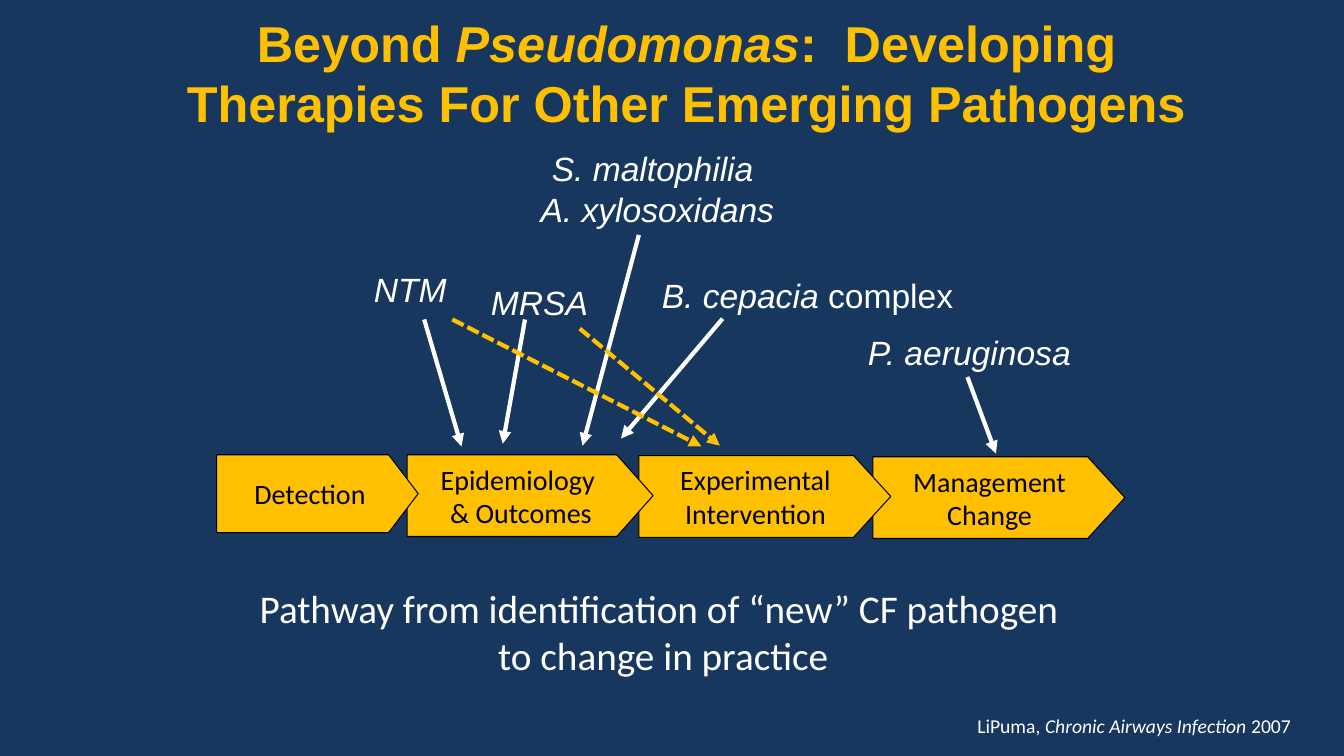
from lxml import etree
from pptx import Presentation
from pptx.dml.color import RGBColor
from pptx.enum.dml import MSO_LINE
from pptx.enum.shapes import MSO_CONNECTOR, MSO_SHAPE
from pptx.enum.text import MSO_ANCHOR, PP_ALIGN
from pptx.oxml.ns import qn
from pptx.util import Cm, Pt

NAVY = RGBColor(0x17, 0x37, 0x5E)
GOLD = RGBColor(0xFF, 0xC0, 0x00)
WHITE = RGBColor(0xFF, 0xFF, 0xFF)
BLACK = RGBColor(0x00, 0x00, 0x00)

LEFT = PP_ALIGN.LEFT
CENTER = PP_ALIGN.CENTER
TOP = MSO_ANCHOR.TOP
MIDDLE = MSO_ANCHOR.MIDDLE
STRAIGHT = MSO_CONNECTOR.STRAIGHT
PENTAGON = MSO_SHAPE.PENTAGON
DASHED = MSO_LINE.SQUARE_DOT

STAGES = [
    ((22, 11.51, 6.35, 2.06), 0.456, ["Management", "Change"]),
    ((16.1, 11.48, 6.35, 2.06), 0.456, ["Experimental", "Intervention"]),
    ((10.26, 11.46, 6.2, 2.06), 0.445, ["Epidemiology ", "& Outcomes"]),
    ((5.46, 11.46, 5.08, 1.96), 0.38, ["Detection"]),
]

PATHOGENS = [
    ((21.62, 8.23, 5.97, 1.27), LEFT, [[("P. aeruginosa", True)]]),
    ((9.17, 6.65, 2.34, 1.27), CENTER, [[("NTM", True)]]),
    ((12.12, 6.99, 2.95, 1.27), CENTER, [[("MRSA", True)]]),
    ((13.34, 3.61, 6.45, 2.31), CENTER,
     [[("S. maltophilia ", True)], [("A. xylosoxidans", True)]]),
    ((16.43, 6.81, 8.71, 1.3), LEFT,
     [[("B. cepacia ", True), ("complex", False)]]),
]

CURRENT_ARROWS = [
    (24.38, 9.5, 25.1, 11.43),
    (10.69, 8.05, 11.63, 11.25),
    (13.23, 8.05, 12.67, 11.18),
    (16.1, 5.92, 14.68, 11.23),
    (18.21, 8.03, 15.65, 11.05),
]

EMERGING_ARROWS = [
    (11.4, 8.05, 17.68, 11.25),
    (14.61, 8.28, 18.14, 11.23),
]


def write_text(frame, lines, font_name, size, color, alignment, bold=False):
    for index, line in enumerate(lines):
        paragraph = frame.add_paragraph() if index else frame.paragraphs[0]
        paragraph.alignment = alignment
        for text, italic in line:
            run = paragraph.add_run()
            run.text = text
            run.font.name = font_name
            run.font.size = Pt(size)
            run.font.color.rgb = color
            run.font.bold = bold
            run.font.italic = italic


def add_text(slide, box, lines, font_name, size, color=WHITE,
             alignment=CENTER, anchor=TOP, bold=False):
    frame = slide.shapes.add_textbox(*map(Cm, box)).text_frame
    frame.word_wrap = True
    frame.vertical_anchor = anchor
    write_text(frame, lines, font_name, size, color, alignment, bold)


def add_stage(slide, box, point, labels):
    shape = slide.shapes.add_shape(PENTAGON, *map(Cm, box))
    shape.adjustments[0] = point
    shape.shadow.inherit = False
    shape.fill.solid()
    shape.fill.fore_color.rgb = GOLD
    shape.line.color.rgb = BLACK
    shape.line.width = Pt(0.75)
    frame = shape.text_frame
    frame.word_wrap = False
    frame.vertical_anchor = MIDDLE
    lines = [[(label, False)] for label in labels]
    write_text(frame, lines, "Calibri", 20, BLACK, CENTER)


def add_arrow(slide, ends, color, dash=None):
    connector = slide.shapes.add_connector(STRAIGHT, *map(Cm, ends))
    connector.line.color.rgb = color
    connector.line.width = Pt(3)
    if dash:
        connector.line.dash_style = dash
    outline = connector.line._get_or_add_ln()
    etree.SubElement(outline, qn("a:tailEnd"), type="triangle")
    etree.SubElement(connector._element.spPr, qn("a:effectLst"))


def main():
    presentation = Presentation()
    presentation.slide_width = Cm(33.87)
    presentation.slide_height = Cm(19.05)
    slide = presentation.slides.add_slide(presentation.slide_layouts[6])
    slide.background.fill.solid()
    slide.background.fill.fore_color.rgb = NAVY

    for box, point, labels in STAGES:
        add_stage(slide, box, point, labels)

    title = [[("Beyond ", False), ("Pseudomonas", True),
              (":  Developing Therapies For Other Emerging Pathogens", False)]]
    add_text(slide, (3.73, 0.28, 27.15, 3.1), title, "Arial", 36, GOLD,
             anchor=MIDDLE, bold=True)

    for box, alignment, lines in PATHOGENS:
        add_text(slide, box, lines, "Arial", 24, alignment=alignment)
    for ends in CURRENT_ARROWS:
        add_arrow(slide, ends, WHITE)

    citation = [[("LiPuma, ", False), ("Chronic Airways Infection ", True),
                 ("2007", False)]]
    add_text(slide, (24.38, 17.86, 8.48, 0.86), citation, "Calibri", 14,
             alignment=LEFT)
    caption = [[("Pathway from identification of “new” CF pathogen ", False)],
               [("to change in practice", False)]]
    add_text(slide, (5.08, 14.61, 23.27, 2.64), caption, "Calibri", 28)

    for ends in EMERGING_ARROWS:
        add_arrow(slide, ends, GOLD, DASHED)

    presentation.save("out.pptx")


if __name__ == "__main__":
    main()
